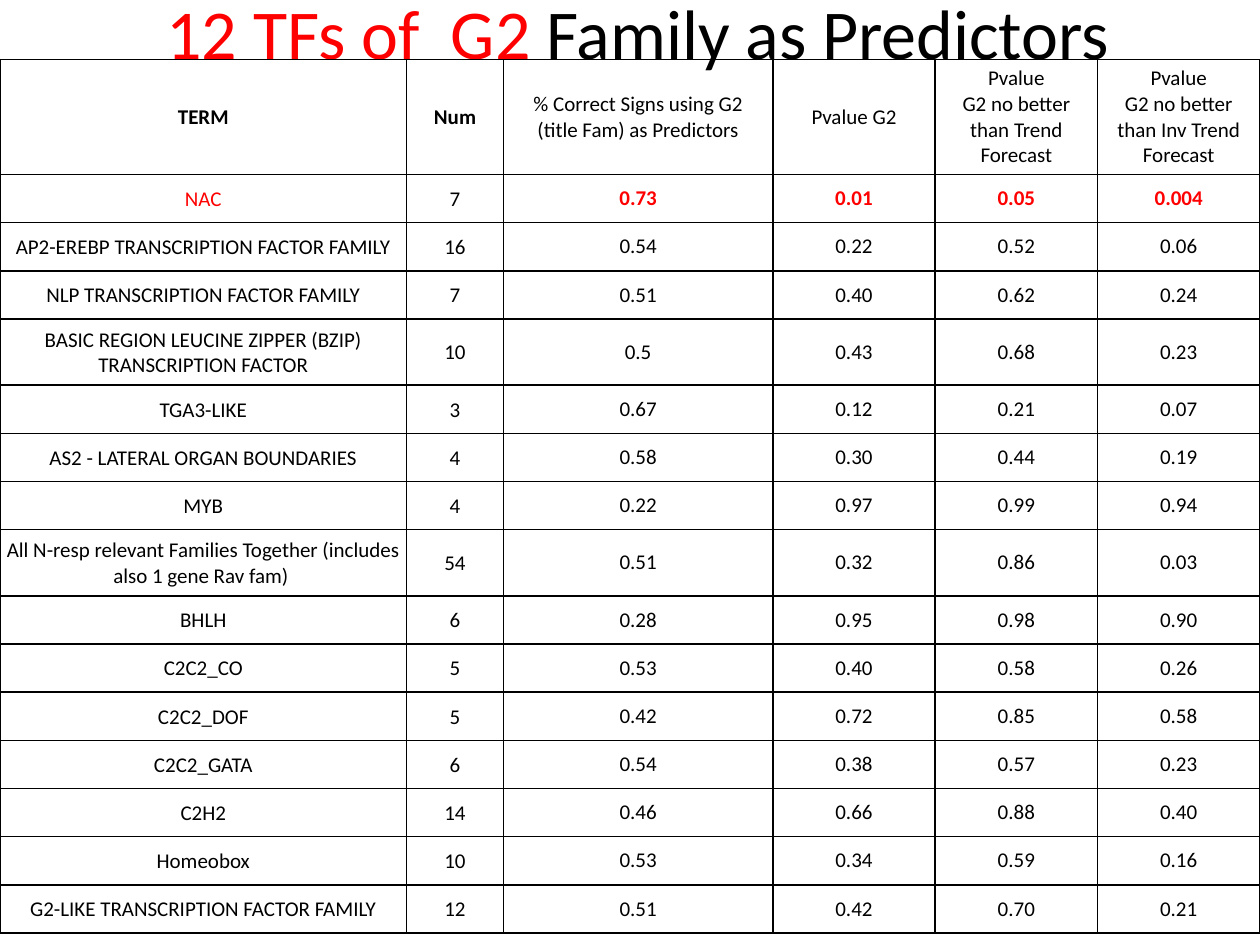
import pptx
import pptx.util
import pptx.dml.color
import pptx.enum.text
import pptx.oxml
import pptx.oxml.ns

RED = pptx.dml.color.RGBColor(0xFF, 0x00, 0x00)
BLACK = pptx.dml.color.RGBColor(0x00, 0x00, 0x00)

COLUMN_WEIGHTS = [3.23, 0.77, 2.14, 1.29, 1.29, 1.29]
HEADER_HEIGHT, TALL_HEIGHT, ROW_HEIGHT = 0.089, 0.07, 0.051
TALL_ROWS = (4, 8)
LABEL_COLUMNS = 2

HEADER = [
    "TERM", "Num", "% Correct Signs using G2 (title Fam) as Predictors", "Pvalue G2",
    "Pvalue\nG2 no better than Trend Forecast",
    "Pvalue\nG2 no better than Inv Trend Forecast",
]
FAMILIES = [
    ["NAC", "7", "0.73", "0.01", "0.05", "0.004"],
    ["AP2-EREBP TRANSCRIPTION FACTOR FAMILY", "16", "0.54", "0.22", "0.52", "0.06"],
    ["NLP TRANSCRIPTION FACTOR FAMILY", "7", "0.51", "0.40", "0.62", "0.24"],
    ["BASIC REGION LEUCINE ZIPPER (BZIP) TRANSCRIPTION FACTOR", "10", "0.5", "0.43", "0.68", "0.23"],
    ["TGA3-LIKE", "3", "0.67", "0.12", "0.21", "0.07"],
    ["AS2 - LATERAL ORGAN BOUNDARIES", "4", "0.58", "0.30", "0.44", "0.19"],
    ["MYB", "4", "0.22", "0.97", "0.99", "0.94"],
    ["All N-resp relevant Families Together (includes also 1 gene Rav fam) ", "54",
     "0.51", "0.32", "0.86", "0.03"],
    ["BHLH", "6", "0.28", "0.95", "0.98", "0.90"],
    ["C2C2_CO", "5", "0.53", "0.40", "0.58", "0.26"],
    ["C2C2_DOF", "5", "0.42", "0.72", "0.85", "0.58"],
    ["C2C2_GATA", "6", "0.54", "0.38", "0.57", "0.23"],
    ["C2H2", "14", "0.46", "0.66", "0.88", "0.40"],
    ["Homeobox", "10", "0.53", "0.34", "0.59", "0.16"],
    ["G2-LIKE TRANSCRIPTION FACTOR FAMILY", "12", "0.51", "0.42", "0.70", "0.21"],
]


class Deck:
    font = "Calibri"
    title_size = pptx.util.Pt(40)
    cell_size = pptx.util.Pt(12)
    border = pptx.util.Pt(1)
    narrow = pptx.util.Inches(0.01)

    def __init__(self, prs):
        self.prs = prs
        self.s = prs.slides.add_slide(prs.slide_layouts[5])

    def across(self, share):
        return round(self.prs.slide_width * share)

    def down(self, share):
        return round(self.prs.slide_height * share)

    def apply(self, target, values):
        for name, value in values.items():
            setattr(target, name, value)

    def run(self, p, text, size, color, bold=False):
        r = p.add_run()
        r.text = text
        self.apply(r.font, {"name": self.font, "size": size, "bold": bold})
        r.font.color.rgb = color

    def title(self, parts, left, top, width, height):
        sp = self.s.shapes.title
        self.apply(sp, {"left": self.across(left), "top": self.down(top),
                        "width": self.across(width), "height": self.down(height)})
        tf = sp.text_frame
        self.apply(tf, {"word_wrap": True,
                        "vertical_anchor": pptx.enum.text.MSO_ANCHOR.MIDDLE})
        p = tf.paragraphs[0]
        p.alignment = pptx.enum.text.PP_ALIGN.CENTER
        for text, color in parts:
            self.run(p, text, self.title_size, color)

    def borders(self, cell):
        tc_pr = cell._tc.get_or_add_tcPr()
        for i, side in enumerate(("lnL", "lnR", "lnT", "lnB")):
            tc_pr.insert(i, pptx.oxml.parse_xml(
                f'<a:{side} {pptx.oxml.ns.nsdecls("a")} w="{self.border}">'
                f'<a:solidFill><a:srgbClr val="{BLACK}"/></a:solidFill></a:{side}>'))

    def cell(self, cell, text, color, bold, margins):
        self.apply(cell, {"vertical_anchor": pptx.enum.text.MSO_ANCHOR.MIDDLE, **margins})
        cell.fill.background()
        self.borders(cell)
        tf = cell.text_frame
        for i, line in enumerate(text.split("\n")):
            p = tf.add_paragraph() if i else tf.paragraphs[0]
            p.alignment = pptx.enum.text.PP_ALIGN.CENTER
            self.run(p, line, self.cell_size, color, bold)

    def table(self, rows, weights, heights, top):
        frame = self.s.shapes.add_table(len(rows), len(weights), 0, self.down(top),
                                        self.across(1), self.down(sum(heights)))
        table = frame.table
        self.apply(table, {"first_row": False, "horz_banding": False})
        for column, weight in zip(table.columns, weights):
            column.width = self.across(weight / sum(weights))
        for row, height in zip(table.rows, heights):
            row.height = self.down(height)
        tight = {"margin_left": self.narrow, "margin_right": self.narrow,
                 "margin_top": self.narrow, "margin_bottom": 0}
        for y, row in enumerate(rows):
            for x, text in enumerate(row):
                label = x < LABEL_COLUMNS
                color = RED if y == 1 and x != 1 else BLACK
                bold = (y == 0 and label) or (y == 1 and not label)
                self.cell(table.cell(y, x), text, color, bold, tight if label else {})


def main():
    prs = pptx.Presentation()
    prs.slide_width = pptx.util.Inches(10)
    prs.slide_height = pptx.util.Inches(7.5)
    deck = Deck(prs)
    deck.title([(" 12 TFs of  G2 ", RED), ("Family as Predictors", BLACK)],
               0.05, -0.05, 0.9, 1 / 6)
    rows = [HEADER] + FAMILIES
    heights = [HEADER_HEIGHT] + [TALL_HEIGHT if y in TALL_ROWS else ROW_HEIGHT
                                 for y in range(1, len(rows))]
    deck.table(rows, COLUMN_WEIGHTS, heights, 0.063)
    prs.save("out.pptx")


if __name__ == "__main__":
    main()
